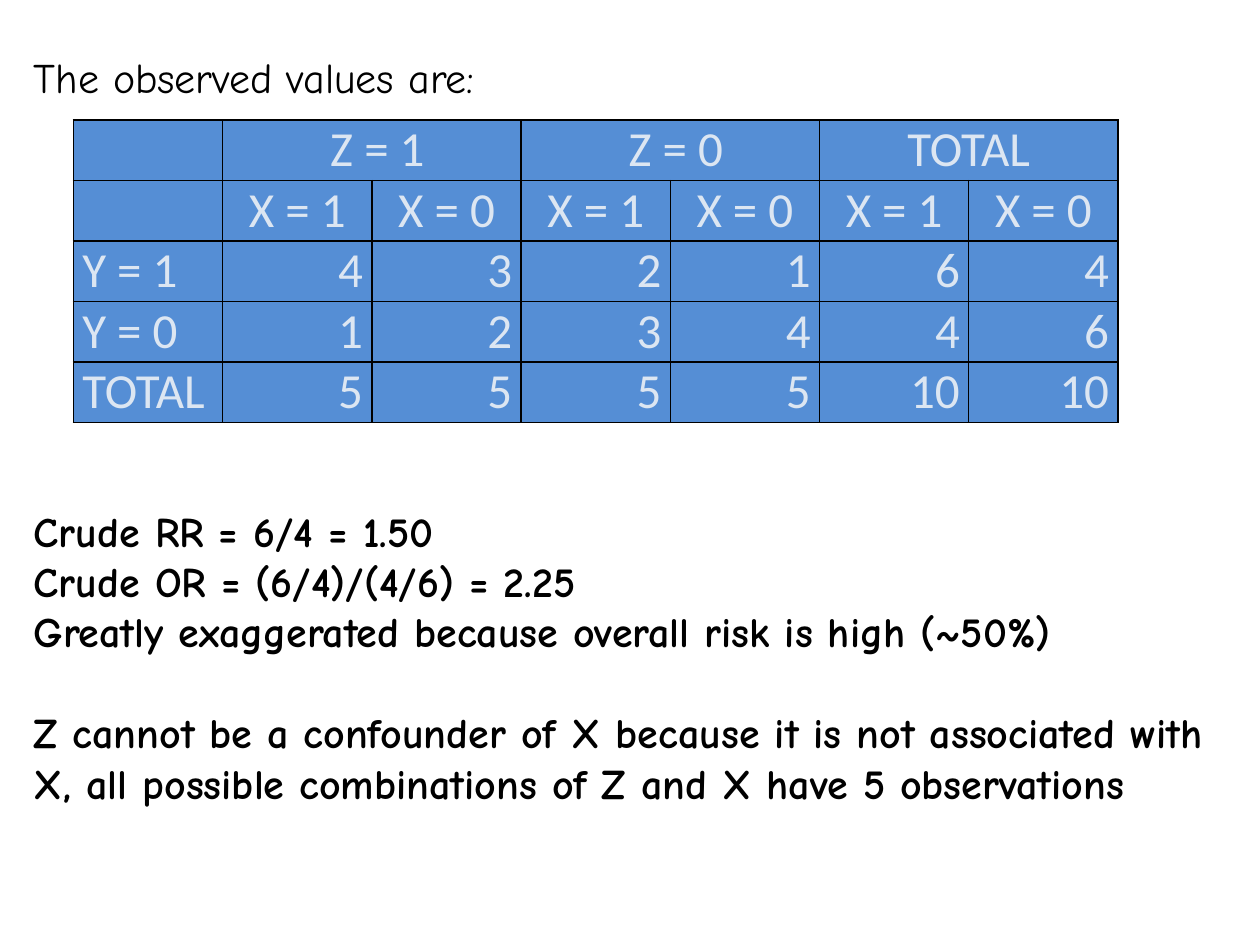
from lxml.etree import SubElement
from pptx import Presentation
from pptx.dml.color import RGBColor
from pptx.enum.text import PP_ALIGN as Align
from pptx.oxml.ns import qn
from pptx.util import Cm, Pt

BLACK, BLUE, PALE = "000000", "558ED5", "DCE6F2"
LINE = 28.8  # height of one 24 pt line, in points

GROUPS = [" Z = 1", " Z = 0", "TOTAL"]
EXPOSURES = ["X = 1", "X = 0"]
COUNTS = [
    ("Y = 1", 4, 3, 2, 1, 6, 4),
    ("Y = 0", 1, 2, 3, 4, 4, 6),
    ("TOTAL", 5, 5, 5, 5, 10, 10),
]
# text, bold, empty lines above
STATEMENTS = [
    ("The observed values are:", False, 0),
    ("Crude RR = 6/4 = 1.50", True, 8),
    ("Crude OR = (6/4)/(4/6) = 2.25", True, 0),
    ("Greatly exaggerated because overall risk is high (~50%)", True, 0),
    ("Z cannot be a confounder of X because it is not associated with X, "
     "all possible combinations of Z and X have 5 observations", True, 1),
]


def color(hex_text):
    return RGBColor.from_string(hex_text)


def set_font(paragraph, name, size, hex_text, bold=False):
    font = paragraph.font
    font.name, font.size, font.bold = name, Pt(size), bold
    font.color.rgb = color(hex_text)


def add_borders(cell):
    properties = cell._tc.get_or_add_tcPr()
    for position, side in enumerate(("lnL", "lnR", "lnT", "lnB")):
        border = properties.makeelement(qn(f"a:{side}"), {"w": str(Pt(1))})
        fill = SubElement(border, qn("a:solidFill"))
        SubElement(fill, qn("a:srgbClr"), val=BLACK)
        properties.insert(position, border)  # borders precede the cell fill


def fill_cell(cell, text, align):
    cell.margin_left = cell.margin_right = Cm(0.18)
    cell.margin_top = cell.margin_bottom = 0
    cell.fill.solid()
    cell.fill.fore_color.rgb = color(BLUE)
    add_borders(cell)
    cell.text = str(text)
    paragraph = cell.text_frame.paragraphs[0]
    paragraph.alignment = align
    set_font(paragraph, "Calibri", 28, PALE)


def add_counts(page):
    group_row = [""] + [text for group in GROUPS for text in (group, "")]
    rows = [group_row, [""] + EXPOSURES * len(GROUPS), *COUNTS]
    columns = len(group_row)
    table = page.shapes.add_table(len(rows), columns, Cm(1.48), Cm(2.42),
                                  Cm(21.06), Cm(6.1)).table
    for row in table.rows:
        row.height = Cm(1.22)
    for r, row in enumerate(rows):
        for c, text in enumerate(row):
            if c == 0:
                align = Align.LEFT
            else:
                align = Align.CENTER if r < 2 else Align.RIGHT
            fill_cell(table.cell(r, c), text, align)
    for c in range(1, columns, 2):
        table.cell(0, c).merge(table.cell(0, c + 1))


def add_statements(page):
    box = page.shapes.add_textbox(Cm(0.43), Cm(0.33), Cm(24.16), Cm(18.72))
    frame = box.text_frame
    frame.word_wrap = True
    frame.margin_top = Cm(0.71)
    for number, (text, bold, gap) in enumerate(STATEMENTS):
        para = frame.add_paragraph() if number else frame.paragraphs[0]
        para.text = text
        para.space_before = Pt(gap * LINE)
        set_font(para, "Comic Neue", 24, BLACK, bold)


def main():
    deck = Presentation()
    deck.slide_width, deck.slide_height = Cm(25.4), Cm(19.05)
    page = deck.slides.add_slide(deck.slide_layouts.get_by_name("Blank"))
    add_counts(page)
    add_statements(page)
    deck.save("out.pptx")


if __name__ == "__main__":
    main()
